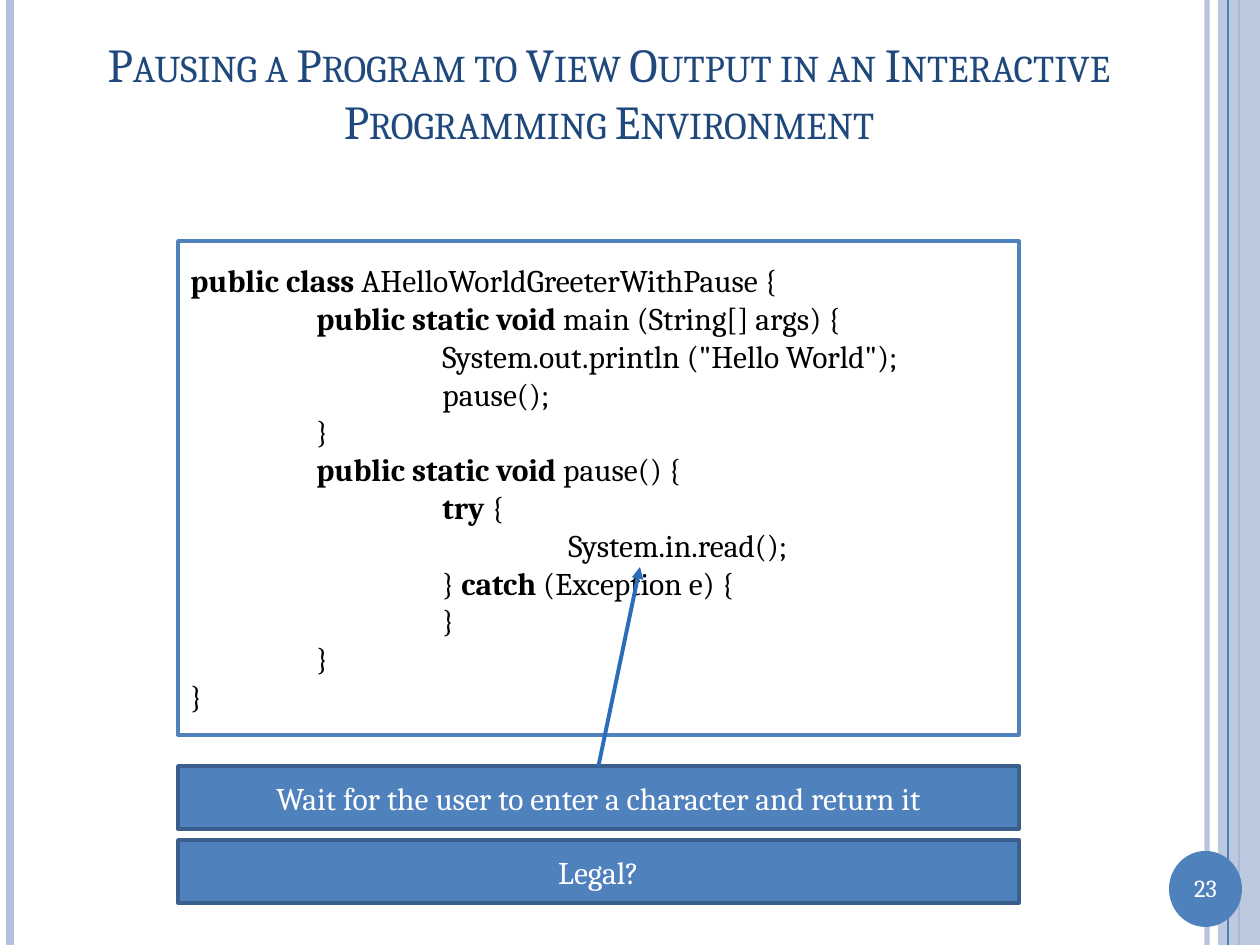
from lxml import etree
from pptx import Presentation
from pptx import util as u
from pptx.dml.color import RGBColor
from pptx.enum import shapes, text
from pptx.oxml.ns import qn

W, H = 1260, 945
SCALE = u.Inches(10) / W
FONT = "Cambria"
TAB = 126
C = {"white": "FFFFFF", "black": "000000", "navy": "1F497D", "blue": "4F81BD",
     "pale": "B3C1DB", "edge": "3A5F8C", "arrow": "2C6CB9"}

CODE = [
    (0, "public class", " AHelloWorldGreeterWithPause {"),
    (1, "public static void", " main (String[] args) {"),
    (2, "", "System.out.println (\"Hello World\");"),
    (2, "", "pause();"),
    (1, "", "}"),
    (1, "public static void", " pause() {"),
    (2, "try", " {"),
    (3, "", "System.in.read();"),
    (2, "} ", "catch", " (Exception e) {"),
    (2, "", "}"),
    (1, "", "}"),
    (0, "", "}"),
]


def px(n):
    return u.Emu(round(n * SCALE))


def rgb(name):
    return RGBColor.from_string(C[name])


def set_alpha(fill_parent, percent):
    color = next(fill_parent.iter(qn("a:srgbClr")))
    etree.SubElement(color, qn("a:alpha"), val=str(percent * 1000))


def style(p, size, color, align=text.PP_ALIGN.CENTER):
    p.alignment = align
    for r in p.runs:
        r.font.name, r.font.size = FONT, u.Pt(size)
        r.font.color.rgb = rgb(color)


def add_box(s, box, fill, line=None, kind=shapes.MSO_SHAPE.RECTANGLE):
    sp = s.shapes.add_shape(kind, *map(px, box))
    sp.shadow.inherit = False
    sp.fill.solid()
    sp.fill.fore_color.rgb = rgb(fill)
    if line:
        sp.line.color.rgb = rgb(line)
        sp.line.width = u.Pt(2)
    else:
        sp.line.fill.background()
    sp.text_frame.vertical_anchor = text.MSO_ANCHOR.MIDDLE
    return sp


def add_line(s, x1, y1, x2, y2, color, width):
    cx = s.shapes.add_connector(shapes.MSO_CONNECTOR.STRAIGHT, *map(px, (x1, y1, x2, y2)))
    cx.line.color.rgb = rgb(color)
    cx.line.width = u.Pt(width)
    etree.SubElement(cx._element.spPr, qn("a:effectLst"))
    return cx


def add_frame(s, x, y, w, h):
    rail = add_line(s, x + w - 53, y, x + w - 53, y + h, "pale", 3)
    set_alpha(rail._element.spPr, 93)
    add_line(s, x + 10, y, x + 10, y + h, "pale", 4.5)
    add_line(s, x + w - 21, y, x + w - 21, y + h, "blue", 1.5)
    band = add_box(s, (x + w - 42, y, 42, h), "pale")
    set_alpha(band._element.spPr, 87)
    add_line(s, x + w - 32, y, x + w - 32, y + h, "blue", 0.75)


def add_page_number(s, x, y, w, h, number):
    add_box(s, (x, y, w, h), "blue", kind=shapes.MSO_SHAPE.OVAL)
    tf = s.shapes.add_textbox(px(x), px(y + 16), px(w), px(h - 33)).text_frame
    tf.word_wrap = True
    tf.text = number
    style(tf.paragraphs[0], 14, "white")


def add_title(s, x, y, w, h, words):
    title = s.shapes.title
    title.left, title.top, title.width, title.height = map(px, (x, y, w, h))
    tf = title.text_frame
    tf.text = words
    tf.auto_size = text.MSO_AUTO_SIZE.NONE
    tf.vertical_anchor = text.MSO_ANCHOR.MIDDLE
    style(tf.paragraphs[0], 27, "navy")
    tf.paragraphs[0].runs[0].font._element.set("cap", "small")


def add_code(s, x, y, w, h, lines):
    tf = add_box(s, (x, y, w, h), "white", "blue").text_frame
    for i, (depth, *parts) in enumerate(lines):
        p = tf.paragraphs[0] if i == 0 else tf.add_paragraph()
        if depth:
            p.add_run().text = "\t" * depth
        keyword = parts[-2]
        for part in filter(None, parts):
            r = p.add_run()
            r.text = part
            r.font.bold = part == keyword
        style(p, 18, "black", text.PP_ALIGN.LEFT)
        p._p.get_or_add_pPr().set("defTabSz", str(px(TAB)))


def add_note(s, x, y, w, h, words):
    sp = add_box(s, (x, y, w, h), "blue", "edge")
    sp.text_frame.text = words
    style(sp.text_frame.paragraphs[0], 18, "white")
    return sp


def add_pointer(s, note, x, y):
    cx = add_line(s, x, y, x, y, "arrow", 2.25)
    cx.begin_connect(note, 0)
    etree.SubElement(cx.line._get_or_add_ln(), qn("a:tailEnd"), type="triangle")


def main():
    prs = Presentation()
    prs.slide_width, prs.slide_height = px(W), px(H)
    s = prs.slides.add_slide(prs.slide_layouts[5])
    left, width = 178, 841
    add_frame(s, 0, 0, W, H)
    add_page_number(s, 1169, 851, 73, 76, "23")
    add_title(s, 63, 37, 1092, 110,
              "Pausing a Program to View Output in an Interactive Programming Environment")
    add_code(s, left, 241, width, 494, CODE)
    wait = add_note(s, left, 766, width, 63,
                    "Wait for the user to enter a character and return it")
    add_note(s, left, 840, width, 63, "Legal?")
    add_pointer(s, wait, 640, 567)
    prs.save("out.pptx")


if __name__ == "__main__":
    main()
